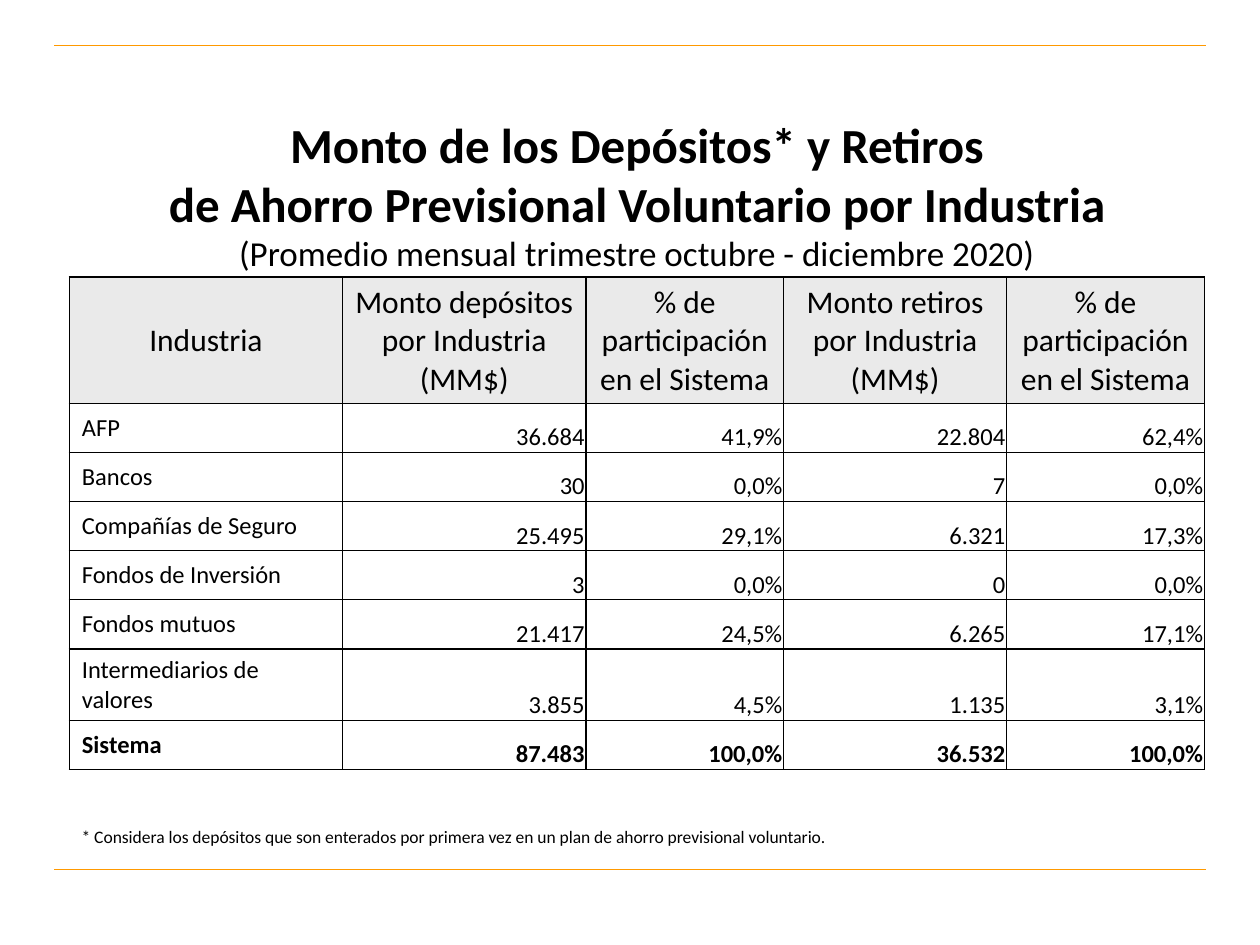
from lxml import etree
from pptx import Presentation
from pptx.dml.color import RGBColor
from pptx.enum import shapes, text
from pptx.oxml import ns
from pptx.util import Inches, Pt

TITLE = "Monto de los Depósitos* y Retiros\nde Ahorro Previsional Voluntario por Industria\n"
PERIOD = "(Promedio mensual trimestre octubre - diciembre 2020)"
FOOTNOTE = (
    "* Considera los depósitos que son enterados por primera vez "
    "en un plan de ahorro previsional voluntario."
)
SHARE = ["% de", "participación en el Sistema"]
HEADERS = [
    ["Industria"],
    ["Monto depósitos por Industria (MM$)"],
    SHARE,
    ["Monto retiros", "por Industria (MM$)"],
    SHARE,
]
INDUSTRIES = [
    ("AFP", "36.684", "41,9%", "22.804", "62,4%"),
    ("Bancos", "30", "0,0%", "7", "0,0%"),
    ("Compañías de Seguro", "25.495", "29,1%", "6.321", "17,3%"),
    ("Fondos de Inversión", "3", "0,0%", "0", "0,0%"),
    ("Fondos mutuos", "21.417", "24,5%", "6.265", "17,1%"),
    ("Intermediarios de valores", "3.855", "4,5%", "1.135", "3,1%"),
    ("Sistema", "87.483", "100,0%", "36.532", "100,0%"),
]
COLUMN_WIDTHS = [2.17, 1.93, 1.57, 1.77, 1.57]
HEADER_HEIGHT, ROW_HEIGHT = 0.92, 0.39
LABEL_MARGINS = (0.1, 0.05, 0.1, 0.05)
NUMBER_MARGINS = (0.01, 0.01, 0.01, 0)
LEFT, CENTER, RIGHT = text.PP_ALIGN.LEFT, text.PP_ALIGN.CENTER, text.PP_ALIGN.RIGHT
MIDDLE, BOTTOM = text.MSO_ANCHOR.MIDDLE, text.MSO_ANCHOR.BOTTOM


def rgb(value):
    return RGBColor.from_string(value)


def write(paragraph, content, size=14, bold=False, align=LEFT):
    paragraph.alignment = align
    for index, line in enumerate(content.split("\n")):
        if index:
            paragraph.add_line_break()
        if line:
            run = paragraph.add_run()
            run.text = line
            run.font.name = "Calibri"
            run.font.size = Pt(size)
            run.font.bold = bold
            run.font.color.rgb = rgb("000000")


def add_rule(slide, y):
    rule = slide.shapes.add_connector(
        shapes.MSO_CONNECTOR.STRAIGHT, Inches(0.43), Inches(y), Inches(9.57), Inches(y)
    )
    rule.line.color.rgb = rgb("FF9900")
    rule.line.width = Pt(0.75)
    etree.SubElement(rule._element.spPr, ns.qn("a:effectLst"))


def add_text_frame(slide, left, top, width, height, wrap=True):
    frame = slide.shapes.add_textbox(
        Inches(left), Inches(top), Inches(width), Inches(height)
    ).text_frame
    frame.word_wrap = wrap
    return frame


def add_borders(cell):
    properties = cell._tc.get_or_add_tcPr()
    for position, side in enumerate(("lnL", "lnR", "lnT", "lnB")):
        border = etree.Element(ns.qn(f"a:{side}"), w=str(Pt(1)))
        fill = etree.SubElement(border, ns.qn("a:solidFill"))
        etree.SubElement(fill, ns.qn("a:srgbClr"), val="000000")
        properties.insert(position, border)


def fill_cell(cell, paragraphs, fill="FFFFFF", margins=LABEL_MARGINS, anchor=MIDDLE, **style):
    cell.fill.solid()
    cell.fill.fore_color.rgb = rgb(fill)
    cell.margin_left, cell.margin_top, cell.margin_right, cell.margin_bottom = map(Inches, margins)
    cell.vertical_anchor = anchor
    frame = cell.text_frame
    for index, content in enumerate(paragraphs):
        write(frame.add_paragraph() if index else frame.paragraphs[0], content, **style)
    add_borders(cell)


def add_savings_table(slide):
    row_count = len(INDUSTRIES) + 1
    table = slide.shapes.add_table(
        row_count, len(HEADERS), Inches(0.55), Inches(2.2), Inches(sum(COLUMN_WIDTHS)),
        Inches(HEADER_HEIGHT + ROW_HEIGHT * len(INDUSTRIES)),
    ).table
    for column, width in zip(table.columns, COLUMN_WIDTHS):
        column.width = Inches(width)
    for index, row in enumerate(table.rows):
        row.height = Inches(ROW_HEIGHT if index else HEADER_HEIGHT)
    for column, header in enumerate(HEADERS):
        fill_cell(table.cell(0, column), header, fill="EAEAEA", size=18, align=CENTER)
    for row, (industry, *figures) in enumerate(INDUSTRIES, 1):
        bold = industry == "Sistema"
        fill_cell(table.cell(row, 0), [industry], bold=bold)
        for column, figure in enumerate(figures, 1):
            fill_cell(table.cell(row, column), [figure], margins=NUMBER_MARGINS,
                      anchor=BOTTOM, bold=bold, align=RIGHT)


def main():
    deck = Presentation()
    deck.slide_width, deck.slide_height = Inches(10), Inches(7.5)
    slide = deck.slides.add_slide(deck.slide_layouts[6])
    for y in (0.36, 6.9):
        add_rule(slide, y)
    heading = add_text_frame(slide, 0.41, 0.99, 9.29, 1.1)
    heading.vertical_anchor = MIDDLE
    write(heading.paragraphs[0], TITLE, size=28, bold=True, align=CENTER)
    write(heading.paragraphs[0], PERIOD, size=20, align=CENTER)
    add_savings_table(slide)
    footnote = add_text_frame(slide, 0.55, 6.51, 6.2, 0.44, wrap=False)
    write(footnote.paragraphs[0], FOOTNOTE, size=10)
    deck.save("out.pptx")


if __name__ == "__main__":
    main()
